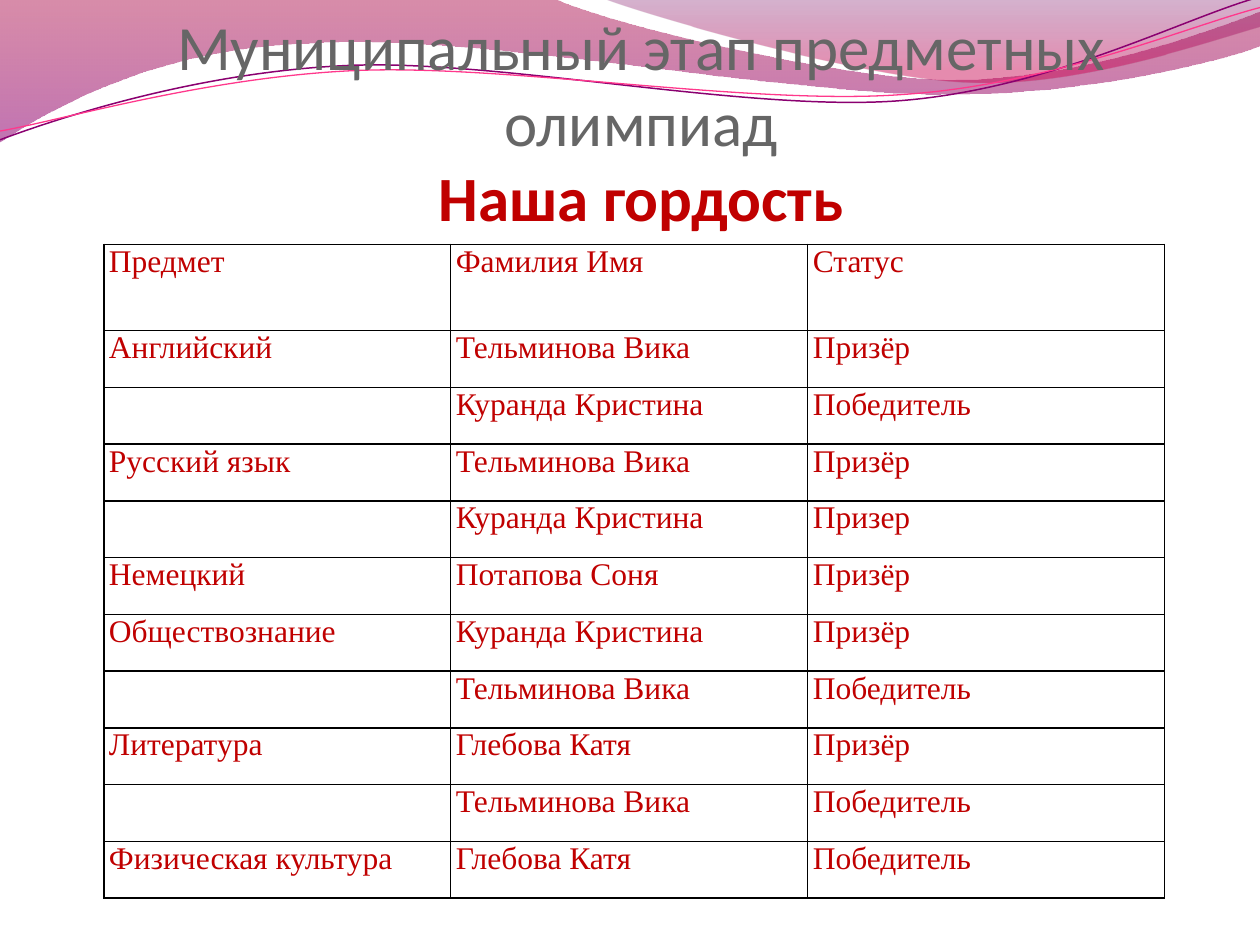
from math import cos, radians, sin

from lxml import etree
from pptx import Presentation
from pptx.dml.color import RGBColor
from pptx.enum.text import MSO_ANCHOR, PP_ALIGN
from pptx.oxml import parse_xml
from pptx.oxml.ns import nsdecls, qn
from pptx.util import Pt

WHITE = RGBColor(0xFF, 0xFF, 0xFF)
BLACK = RGBColor(0x00, 0x00, 0x00)
RED = RGBColor(0xC0, 0x00, 0x00)
GRAY = RGBColor(0x66, 0x66, 0x66)
CRIMSON = RGBColor(0xA9, 0x00, 0x42)
PURPLE = RGBColor(0x8E, 0x00, 0x73)
PLUM = RGBColor(0x73, 0x00, 0x5E)
ROSE = RGBColor(0xC9, 0x00, 0x4F)
VIOLET = RGBColor(0x8A, 0x00, 0x70)
PINK = RGBColor(0xFF, 0x38, 0x8C)

CURVE_ANGLE = 357.3

# An outline is a list of segments after a start point:
# one point makes a straight line, three points make a Bezier curve.
WIDE_WAVE = [
    [(0, 0)],
    [(316.8, -0.7)],
    [(342.7, 12.2), (478.1, 45.4), (545.8, 45.4)],
    [(614.2, 45.4), (689.8, 18.7), (720, 6.5)],
    [(720.7, 25.9)],
    [(707.8, 31.7), (626.4, 54.7), (537.1, 54)],
    [(447.8, 54), (275, 20.2), (185, 24.5)],
    [(92.9, 25.9), (33.1, 59.8), (-0.7, 81.4)],
    [(0, 0)],
]
RIGHT_WAVE = [
    [(344.9, -0.7)],
    [(366.5, 7.9), (491, 44.6), (553.7, 46.8)],
    [(616.3, 49.7), (691.9, 23), (720, 15.1)],
    [(720, 0)],
    [(344.9, -0.7)],
]
VIOLET_CURVE = [
    [(0, 79.9)],
    [(34.6, 67), (113.8, 41), (199.4, 37.4)],
    [(284.4, 33.8), (427, 64.1), (513.4, 57.6)],
    [(599.8, 51.1), (675.4, 10.8), (718.6, -1.4)],
]
PINK_CURVE = [
    [(0, 74.9)],
    [(33.8, 69.1), (118.1, 43.9), (203.8, 40.3)],
    [(290.2, 36.7), (429.8, 60.5), (516.2, 54)],
    [(601.9, 48.2), (678.2, 15.1), (720, 4.3)],
]

RESULTS = [
    ("Предмет", "Фамилия Имя", "Статус"),
    ("Английский", "Тельминова Вика", "Призёр"),
    ("", "Куранда Кристина", "Победитель"),
    ("Русский язык", "Тельминова Вика", "Призёр"),
    ("", "Куранда Кристина", "Призер"),
    ("Немецкий", "Потапова Соня", "Призёр"),
    ("Обществознание", "Куранда Кристина", "Призёр"),
    ("", "Тельминова Вика", "Победитель"),
    ("Литература", "Глебова Катя", "Призёр"),
    ("", "Тельминова Вика", "Победитель"),
    ("Физическая культура", "Глебова Катя", "Победитель"),
]


def to_local(point, box, angle):
    """Place a slide point in the frame of a box that is turned by angle."""
    left, top, width, height = box
    x, y = point[0] - left - width / 2, point[1] - top - height / 2
    turn = radians(-angle)
    return (Pt(x * cos(turn) - y * sin(turn) + width / 2),
            Pt(x * sin(turn) + y * cos(turn) + height / 2))


class SlideBuilder:
    title_font = "Calibri"
    table_font = "Times New Roman"
    title_size = Pt(36)
    table_size = Pt(18)

    def __init__(self, page):
        self.page = page

    def outline(self, box, outline, angle=0, close=False):
        """Draw a freeform in a box, with its segments as true Bezier curves."""
        ends = [to_local(segment[-1], box, angle) for segment in outline]
        builder = self.page.shapes.build_freeform(*ends[0], scale=1.0)
        builder.add_line_segments(ends[1:], close=close)
        shape = builder.convert_to_shape()
        shape.left, shape.top, shape.width, shape.height = map(Pt, box)
        shape.rotation = angle
        shape.shadow.inherit = False

        track = next(shape._element.iter(qn("a:path")))
        track.set("w", str(shape.width))
        track.set("h", str(shape.height))
        for child in list(track):
            track.remove(child)
        for index, segment in enumerate(outline):
            tag = "a:cubicBezTo" if len(segment) == 3 else "a:lnTo"
            step = etree.SubElement(track, qn(tag if index else "a:moveTo"))
            for point in segment:
                x, y = to_local(point, box, angle)
                etree.SubElement(step, qn("a:pt"), x=str(x), y=str(y))
        if close:
            etree.SubElement(track, qn("a:close"))
        return shape

    def wave(self, box, outline, stops):
        """Filled shape; stops are (position, colour, opacity in percent), top to bottom."""
        shape = self.outline(box, outline, close=True)
        shape.line.fill.background()
        shape.fill.gradient()
        shape.fill.gradient_angle = 270
        for stop, (position, color, opacity) in zip(shape.fill.gradient_stops, stops):
            stop.position = position
            stop.color.rgb = color
        tones = shape._element.spPr.iter(qn("a:srgbClr"))
        for tone, (position, color, opacity) in zip(tones, stops):
            etree.SubElement(tone, qn("a:alpha"), val=str(opacity * 1000))

    def curve(self, box, outline, color, width):
        shape = self.outline(box, outline, CURVE_ANGLE)
        shape.fill.background()
        shape.line.color.rgb = color
        shape.line.width = Pt(width)

    def title(self, left, top, width, height, lines):
        """Centred title; each line is (text, colour, bold)."""
        box = self.page.shapes.add_textbox(Pt(left), Pt(top), Pt(width), Pt(height))
        frame = box.text_frame
        frame.word_wrap = True
        frame.vertical_anchor = MSO_ANCHOR.BOTTOM
        frame.margin_left = frame.margin_right = frame.margin_bottom = 0
        frame.margin_top = Pt(3.6)
        para = frame.paragraphs[0]
        para.text = "\v".join(text for text, color, bold in lines)
        para.alignment = PP_ALIGN.CENTER
        for span, (text, color, bold) in zip(para.runs, lines):
            span.font.name = self.title_font
            span.font.size = self.title_size
            span.font.color.rgb = color
            span.font.bold = bold

    def table(self, left, top, widths, heights, rows):
        table = self.page.shapes.add_table(
            len(rows), len(widths), Pt(left), Pt(top), Pt(sum(widths)), Pt(sum(heights))
        ).table
        table.first_row = table.horz_banding = False
        for column, width in zip(table.columns, widths):
            column.width = Pt(width)
        for row, height, texts in zip(table.rows, heights, rows):
            row.height = Pt(height)
            for cell, text in zip(row.cells, texts):
                self.fill_cell(cell, text)

    def fill_cell(self, cell, text):
        cell.margin_left = cell.margin_right = Pt(3)
        cell.margin_top = cell.margin_bottom = 0
        properties = cell._tc.get_or_add_tcPr()
        for side in "LRTB":
            properties.append(parse_xml(
                f'<a:ln{side} {nsdecls("a")} w="{Pt(1)}"><a:solidFill>'
                f'<a:srgbClr val="{BLACK}"/></a:solidFill></a:ln{side}>'
            ))
        cell.fill.solid()
        cell.fill.fore_color.rgb = WHITE
        cell.text_frame.text = text
        for span in cell.text_frame.paragraphs[0].runs:
            span.font.name = self.table_font
            span.font.size = self.table_size
            span.font.color.rgb = RED


def main():
    deck = Presentation()
    deck.slide_width, deck.slide_height = Pt(720), Pt(540)
    builder = SlideBuilder(deck.slides.add_slide(deck.slide_layouts[6]))

    builder.wave((-0.7, -0.7, 721.4, 82.1), WIDE_WAVE,
                 [(0, CRIMSON, 45), (1, PURPLE, 55)])
    builder.wave((344.9, -0.7, 375.1, 50.4), RIGHT_WAVE,
                 [(0, PLUM, 30), (0.8, ROSE, 45)])
    builder.curve((-1.4, 15.8, 721.4, 51.1), VIOLET_CURVE, VIOLET, 0.85)
    builder.curve((-1.4, 21.6, 722.2, 41.8), PINK_CURVE, PINK, 0.75)
    heights = [49.2] + [32.45] * (len(RESULTS) - 1)
    builder.table(59.3, 139.7, [198.2, 204, 204], heights, RESULTS)
    builder.title(42.5, 31.7, 648, 102.2, [
        ("Муниципальный этап предметных олимпиад", GRAY, False),
        ("Наша гордость", RED, True),
    ])
    deck.save("out.pptx")


if __name__ == "__main__":
    main()
